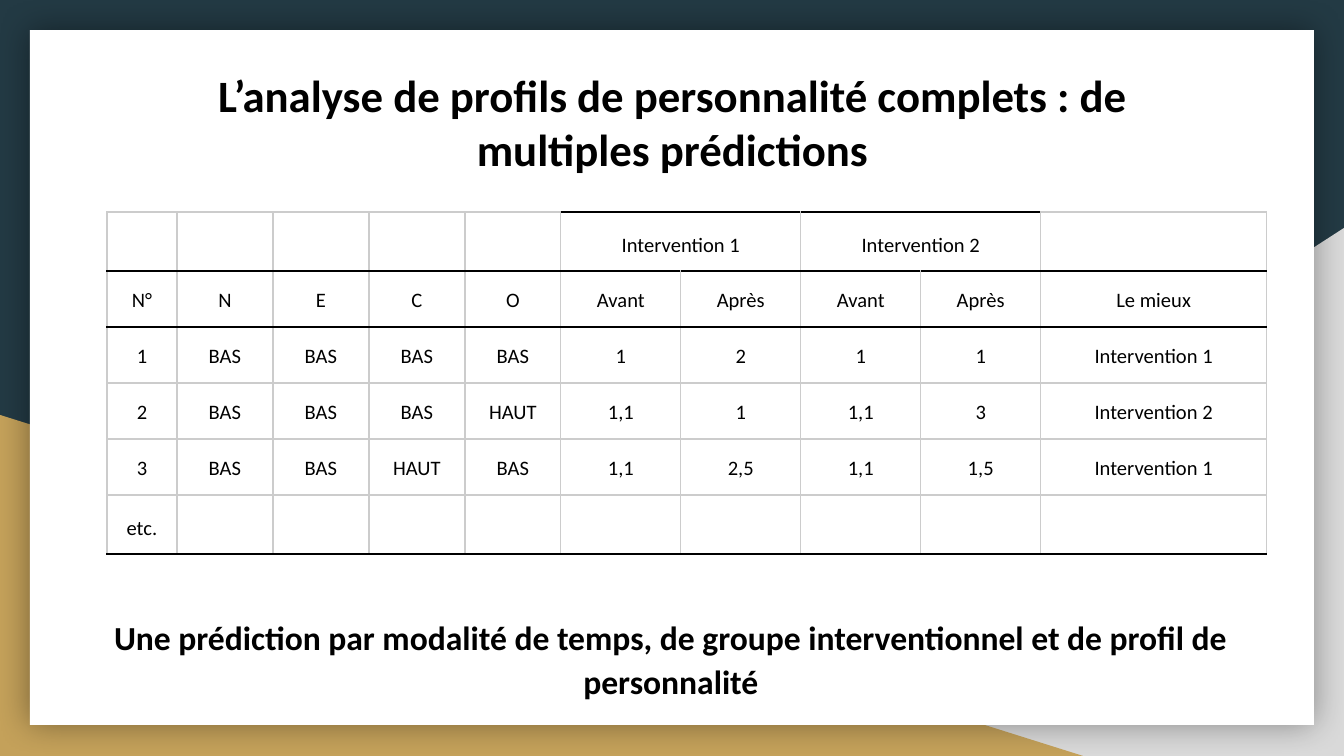
from lxml import etree
from pptx import Presentation
from pptx.dml.color import RGBColor
from pptx.enum.shapes import MSO_SHAPE
from pptx.enum.text import MSO_ANCHOR, PP_ALIGN
from pptx.oxml.ns import qn
from pptx.util import Pt

RECT, TRIANGLE = MSO_SHAPE.RECTANGLE, MSO_SHAPE.RIGHT_TRIANGLE
TOP, MIDDLE, BOTTOM = MSO_ANCHOR.TOP, MSO_ANCHOR.MIDDLE, MSO_ANCHOR.BOTTOM
CENTER = PP_ALIGN.CENTER
PX = 914400 / 134.4
COLORS = {"navy": "233A44", "grey": "D9D9D9", "gold": "C4A15A",
          "white": "FFFFFF", "black": "000000", "rule": "CCCCCC"}


def px(*lengths):
    """Turn pixel lengths into EMU."""
    return [round(n * PX) for n in lengths]


def set_text(frame, text, size, bold=False):
    """Write one centred paragraph and return it."""
    frame.text = text
    p = frame.paragraphs[0]
    p.alignment = CENTER
    font = p.runs[0].font
    font.name, font.size, font.bold = "Calibri", Pt(size), bold
    font.color.rgb = RGBColor.from_string(COLORS["black"])
    return p


prs = Presentation()
prs.slide_width, prs.slide_height = px(1344, 756)
s = prs.slides.add_slide(prs.slide_layouts[5])
s.background.fill.solid()
s.background.fill.fore_color.rgb = RGBColor.from_string(COLORS["navy"])

# Backdrop: two corner triangles and the white card
backdrop = [
    (TRIANGLE, (527, 228, 817, 528), "grey"),
    (TRIANGLE, (0, 415, 1083, 341), "gold"),
    (RECT, (30, 30, 1284, 695), "white"),
]
shapes = []
for kind, box, color in backdrop:
    sp = s.shapes.add_shape(kind, *px(*box))
    sp.fill.solid()
    sp.fill.fore_color.rgb = RGBColor.from_string(COLORS[color])
    sp.line.fill.background()
    sp.shadow.inherit = False
    shapes.append(sp)
right_corner, left_corner, card = shapes
right_corner._element.spPr.find(qn("a:xfrm")).set("flipH", "1")

effects = card._element.spPr.find(qn("a:effectLst"))
shadow = etree.SubElement(effects, qn("a:outerShdw"), blurRad=str(Pt(18)),
                          dist="0", dir="0", algn="ctr", rotWithShape="0")
clr = etree.SubElement(shadow, qn("a:srgbClr"), val=COLORS["black"])
etree.SubElement(clr, qn("a:alpha"), val="40000")

# Title, brought in front of the card
title = s.shapes.title
title.left, title.top, title.width, title.height = px(121, 55, 1103, 140)
s.shapes._spTree.append(title._element)

caption = s.shapes.add_textbox(*px(36, 613, 1270, 89))
for sp, anchor in ((title, TOP), (caption, MIDDLE)):
    tf = sp.text_frame
    tf.word_wrap = True
    tf.vertical_anchor = anchor
    tf.margin_left, tf.margin_top, tf.margin_right, tf.margin_bottom = px(13, 13, 13, 13)
set_text(title.text_frame, "L’analyse de profils de personnalité complets : "
         "de multiples prédictions", 24, True)
p = set_text(caption.text_frame, "Une prédiction par modalité de temps, de groupe "
             "interventionnel et de profil de personnalité", 18, True)
p.line_spacing = 1.08
p.space_after = Pt(8)

# Table of profiles and predictions
rows = [
    ["", "", "", "", "", "Intervention 1", "", "Intervention 2", "", ""],
    ["N°", "N", "E", "C", "O", "Avant", "Après", "Avant", "Après", "Le mieux"],
    ["1", "BAS", "BAS", "BAS", "BAS", "1", "2", "1", "1", "Intervention 1"],
    ["2", "BAS", "BAS", "BAS", "HAUT", "1,1", "1", "1,1", "3", "Intervention 2"],
    ["3", "BAS", "BAS", "HAUT", "BAS", "1,1", "2,5", "1,1", "1,5", "Intervention 1"],
    ["etc."] + [""] * 9,
]
col_widths = [70] + [96] * 4 + [120] * 4 + [226]
row_heights = [59] + [56] * 4 + [59]
last = len(rows) - 1

frame = s.shapes.add_table(len(rows), len(col_widths),
                           *px(107, 212, sum(col_widths), sum(row_heights)))
table = frame.table
table.first_row = table.horz_banding = False
for col, width in zip(table.columns, px(*col_widths)):
    col.width = width
for row, height in zip(table.rows, px(*row_heights)):
    row.height = height
for c in (5, 7):
    table.cell(0, c).merge(table.cell(0, c + 1))

for r, row in enumerate(rows):
    for c, text in enumerate(row):
        cell = table.cell(r, c)
        black_top = r in (1, 2) or (r == 0 and 5 <= c <= 8)
        black_bottom = r in (0, 1, last)
        tcPr = cell._tc.get_or_add_tcPr()
        for side, black in (("L", False), ("R", False),
                            ("T", black_top), ("B", black_bottom)):
            ln = etree.SubElement(tcPr, qn("a:ln" + side), w=str(Pt(0.75)))
            fill = etree.SubElement(ln, qn("a:solidFill"))
            etree.SubElement(fill, qn("a:srgbClr"),
                             val=COLORS["black" if black else "rule"])
        cell.fill.background()
        if text:
            cell.vertical_anchor = BOTTOM if r in (0, last) else MIDDLE
            cell.margin_left, cell.margin_right = px(4, 4)
            cell.margin_top, cell.margin_bottom = px(13, 13)
            set_text(cell.text_frame, text, 11).line_spacing = 1.15

prs.save("out.pptx")
